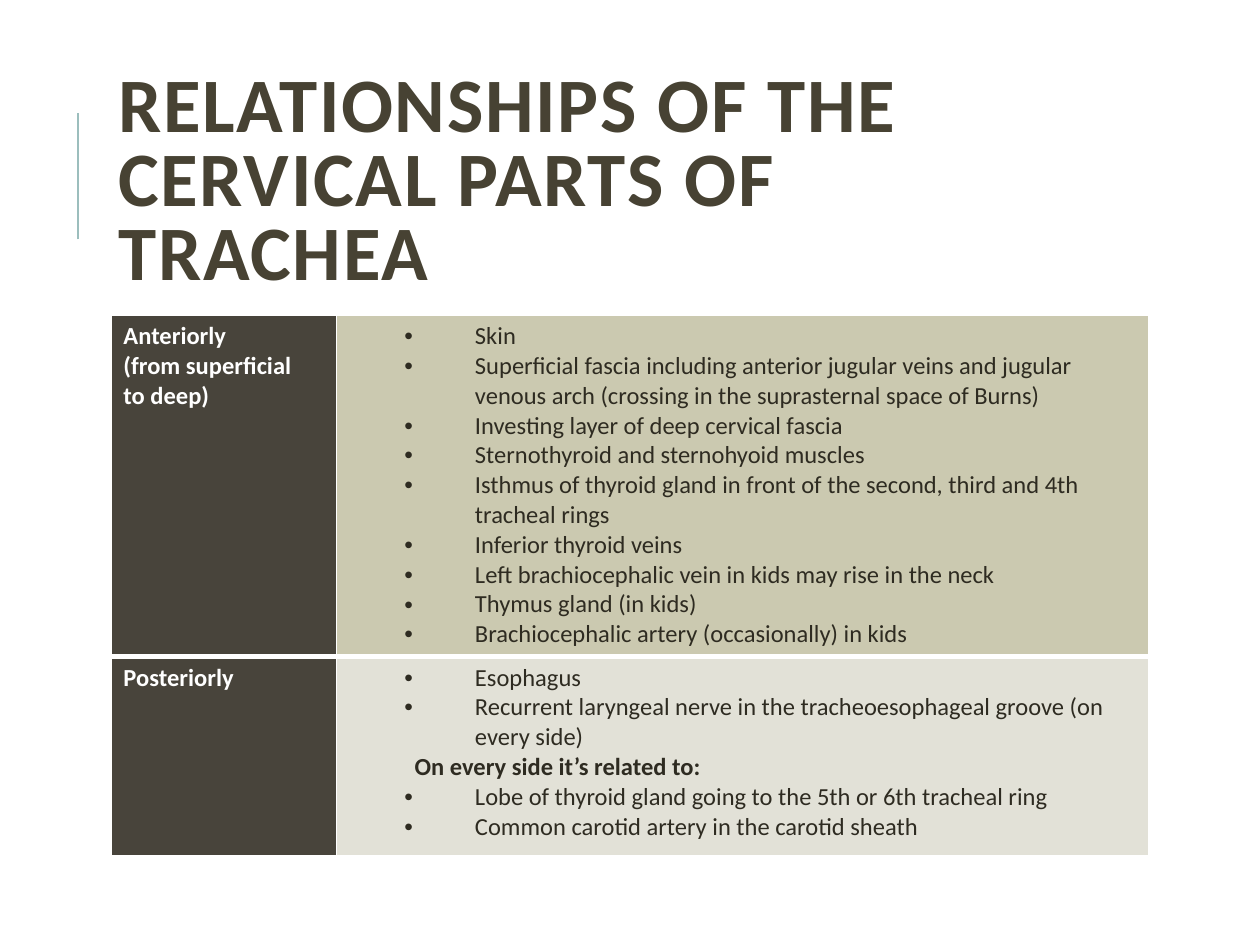
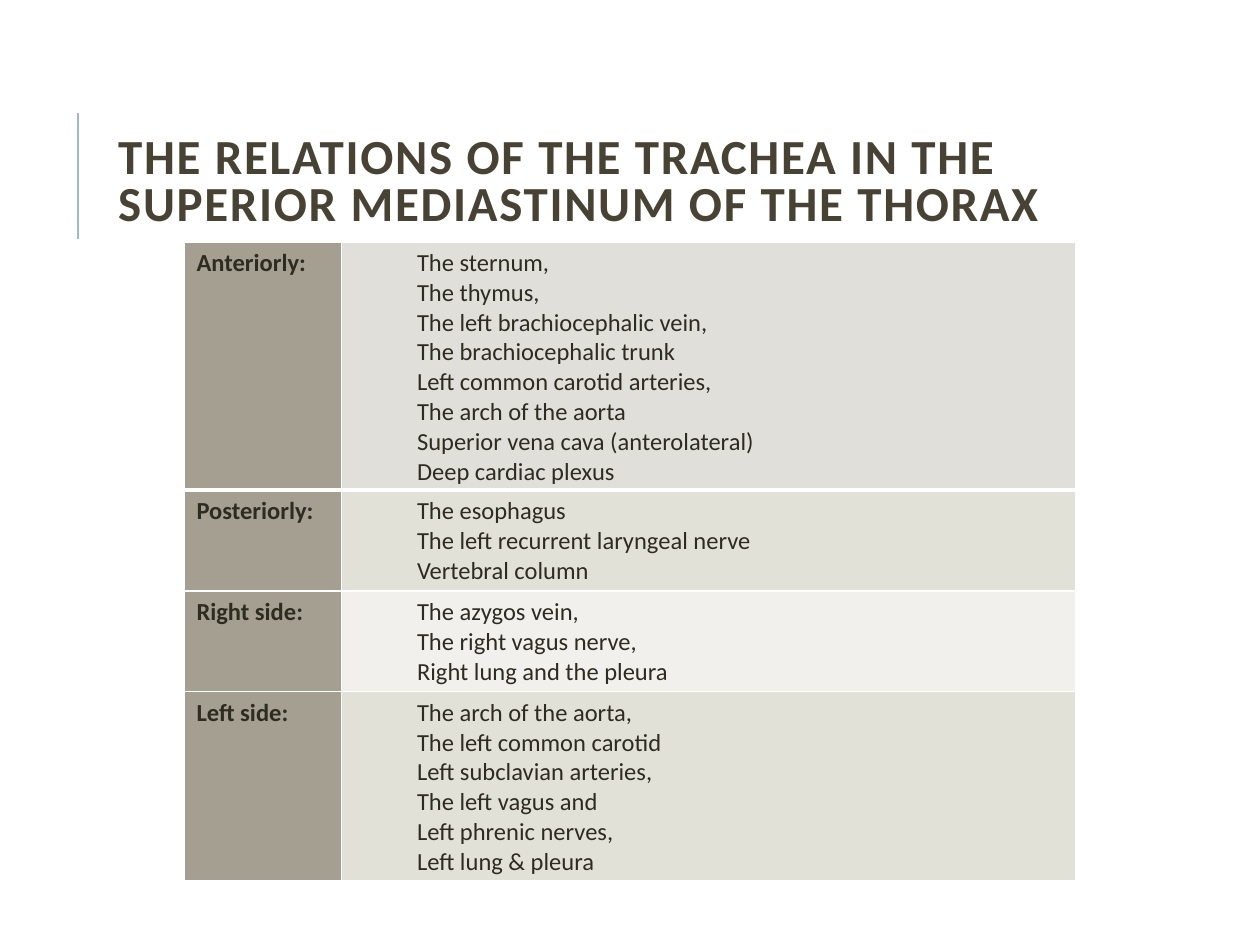
"""Build two slides on the anatomical relations of the trachea."""
from lxml import etree
from pptx import Presentation
from pptx.dml.color import RGBColor
from pptx.enum.shapes import MSO_CONNECTOR as Connector
from pptx.enum.text import MSO_ANCHOR as Anchor
from pptx.oxml.ns import qn
from pptx.util import Inches, Pt

FONT = "Calibri"
COLORS = {
    "title": "474233", "accent": "9CBEBD", "ink": "2E2B21", "white": "FFFFFF",
    "dark": "48443B", "taupe": "A49F91", "sand": "CBC9B0", "stone": "E1DFDA",
    "mist": "E2E1D7", "pale": "F1F0EC",
}
COLUMNS, ROWS = 100, 75
CELL = Inches(0.1)
BULLETED = {"margin": 10, "hanging": 5.6, "bullet": "•"}
SUBHEADING = {"margin": 5.2, "bold": True}
INDENTED = {"margin": 5}

CERVICAL = [
    (27.1, "sand", ["Anteriorly", "(from superficial", "to deep)"], [
        "Skin",
        "Superficial fascia including anterior jugular veins and jugular "
        "venous arch (crossing in the suprasternal space of Burns)",
        "Investing layer of deep cervical fascia",
        "Sternothyroid and sternohyoid muscles",
        "Isthmus of thyroid gland in front of the second, third and 4th tracheal rings",
        "Inferior thyroid veins",
        "Left brachiocephalic vein in kids may rise in the neck",
        "Thymus gland (in kids)",
        "Brachiocephalic artery (occasionally) in kids",
    ]),
    (15.8, "mist", ["Posteriorly"], [
        "Esophagus",
        "Recurrent laryngeal nerve in the tracheoesophageal groove (on every side)",
        "On every side it’s related to:",
        "Lobe of thyroid gland going to the 5th or 6th tracheal ring",
        "Common carotid artery in the carotid sheath",
    ]),
]
THORACIC = [
    (18.9, "stone", ["Anteriorly:"], [
        "The sternum,", "The thymus,", "The left brachiocephalic vein,",
        "The brachiocephalic trunk", "Left common carotid arteries,",
        "The arch of the aorta", "Superior vena cava (anterolateral)",
        "Deep cardiac plexus",
    ]),
    (7.6, "mist", ["Posteriorly:"], [
        "The esophagus", "The left recurrent laryngeal nerve", "Vertebral column",
    ]),
    (7.6, "pale", ["Right side:"], [
        "The azygos vein,", "The right vagus nerve,", "Right lung and the pleura",
    ]),
    (14.4, "mist", ["Left side:"], [
        "The arch of the aorta,", "The left common carotid",
        "Left subclavian arteries,", "The left vagus and",
        "Left phrenic nerves,", "Left lung & pleura",
    ]),
]


def grid(count):
    """Return the length of a number of grid cells."""
    return int(count * CELL)


def rgb(name):
    """Return a palette colour."""
    return RGBColor.from_string(COLORS[name])


def write(paragraph, text, size=14, color="ink", bold=False, spacing=None,
          line_spacing=None, margin=0, hanging=0, bullet=None):
    """Write one formatted paragraph."""
    run = paragraph.add_run()
    run.text = text
    run.font.name, run.font.size, run.font.bold = FONT, Pt(size), bold
    run.font.color.rgb = rgb(color)
    if spacing:
        run.font._element.set("spc", str(spacing * 100))
    if line_spacing:
        paragraph.line_spacing = line_spacing
    properties = paragraph._p.get_or_add_pPr()
    properties.set("marL", str(grid(margin)))
    properties.set("indent", str(-grid(hanging)))
    if bullet:
        etree.SubElement(properties, qn("a:buFont"), typeface="Arial")
        etree.SubElement(properties, qn("a:buChar"), char=bullet)


def write_lines(frame, lines, style_of):
    """Fill a text frame with one paragraph for each line."""
    for index, line in enumerate(lines):
        paragraph = frame.add_paragraph() if index else frame.paragraphs[0]
        write(paragraph, line, **style_of(line))


def add_title(slide, text, size):
    """Add the accent rule and the title beside it."""
    rule = slide.shapes.add_connector(
        Connector.STRAIGHT, grid(6.2), grid(19), grid(6.2), grid(9))
    rule.line.color.rgb = rgb("accent")
    rule.line.width = Pt(1.5)
    etree.SubElement(rule._element.spPr, qn("a:effectLst"))
    title = slide.shapes.add_textbox(grid(8.4), grid(6.4), grid(79.7), grid(16.4))
    frame = title.text_frame
    frame.word_wrap = True
    frame.vertical_anchor = Anchor.MIDDLE
    write(frame.paragraphs[0], text, size=size, color="title", bold=True,
          spacing=1, line_spacing=0.8)


def paint_cell(cell, fill, top, bottom):
    """Give a cell its white borders and its fill."""
    properties = cell._tc.get_or_add_tcPr()
    for side, width in (("L", 1), ("R", 1), ("T", top), ("B", bottom)):
        border = etree.SubElement(properties, qn(f"a:ln{side}"), w=str(Pt(width)))
        paint = etree.SubElement(border, qn("a:solidFill"))
        etree.SubElement(paint, qn("a:srgbClr"), val=COLORS["white"])
    cell.fill.solid()
    cell.fill.fore_color.rgb = rgb(fill)


def add_relations(slide, relations, left, top, widths, label_fill, label_color, style_of):
    """Add a table of directions and the structures found there."""
    heights = [relation[0] for relation in relations]
    table = slide.shapes.add_table(
        len(relations), 2, grid(left), grid(top),
        grid(sum(widths)), grid(sum(heights))).table
    table.first_row = table.horz_banding = False
    for column, width in zip(table.columns, widths):
        column.width = grid(width)
    for index, (height, fill, direction, structures) in enumerate(relations):
        table.rows[index].height = grid(height)
        top_width, bottom_width = 3 if index == 1 else 1, 1 if index else 3
        label, details = table.cell(index, 0), table.cell(index, 1)
        paint_cell(label, label_fill, top_width, bottom_width)
        paint_cell(details, fill, top_width, bottom_width)
        write_lines(label.text_frame, direction,
                    lambda line: {"color": label_color, "bold": True})
        write_lines(details.text_frame, structures, style_of)


def main():
    """Build and save the presentation."""
    deck = Presentation()
    deck.slide_width, deck.slide_height = grid(COLUMNS), grid(ROWS)
    blank = deck.slide_layouts[6]

    cervical = deck.slides.add_slide(blank)
    add_title(cervical, "RELATIONSHIPS OF THE CERVICAL PARTS OF TRACHEA", 44)
    add_relations(cervical, CERVICAL, 8.8, 25, (17.9, 64.5), "dark", "white",
                  lambda line: SUBHEADING if line.endswith(":") else BULLETED)

    thoracic = deck.slides.add_slide(blank)
    add_title(thoracic, "THE RELATIONS OF THE TRACHEA IN THE SUPERIOR "
                        "MEDIASTINUM OF THE THORAX", 28)
    add_relations(thoracic, THORACIC, 14.6, 19.2, (12.5, 58.3), "taupe", "ink",
                  lambda line: INDENTED)

    deck.save("out.pptx")


if __name__ == "__main__":
    main()
